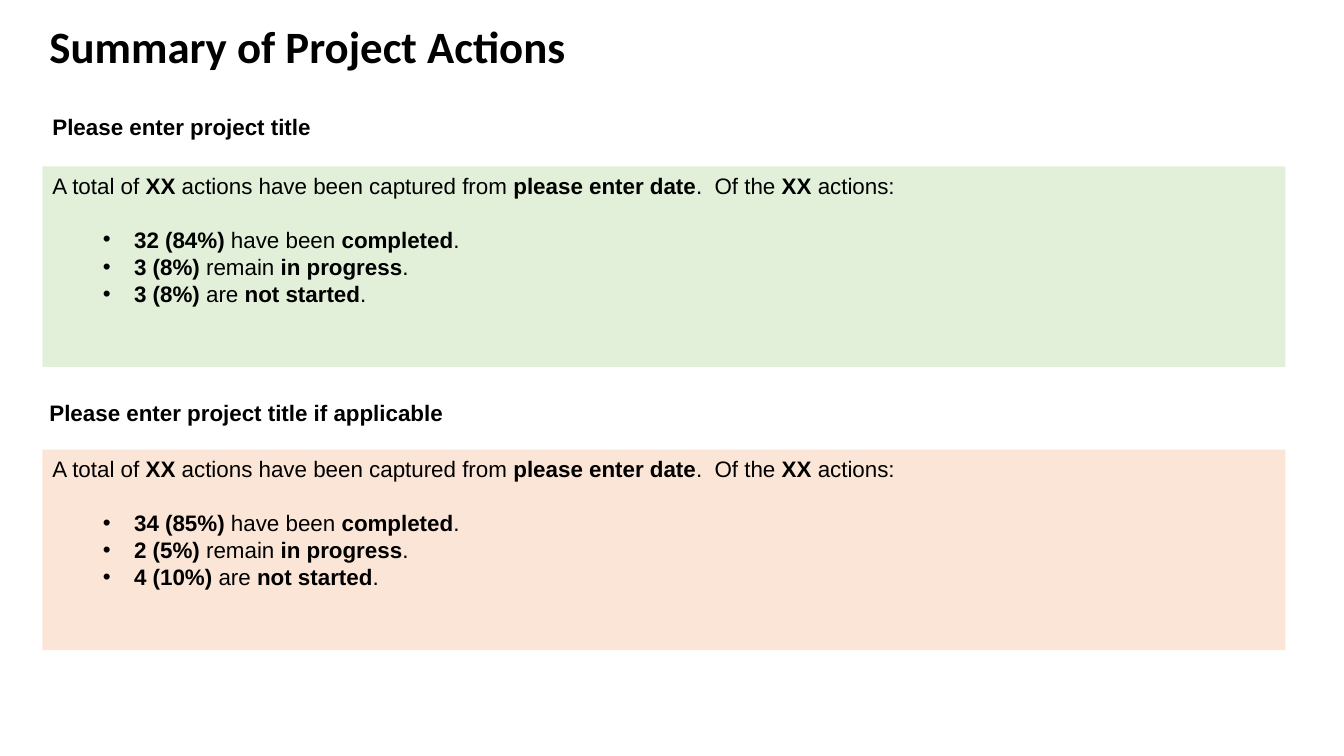
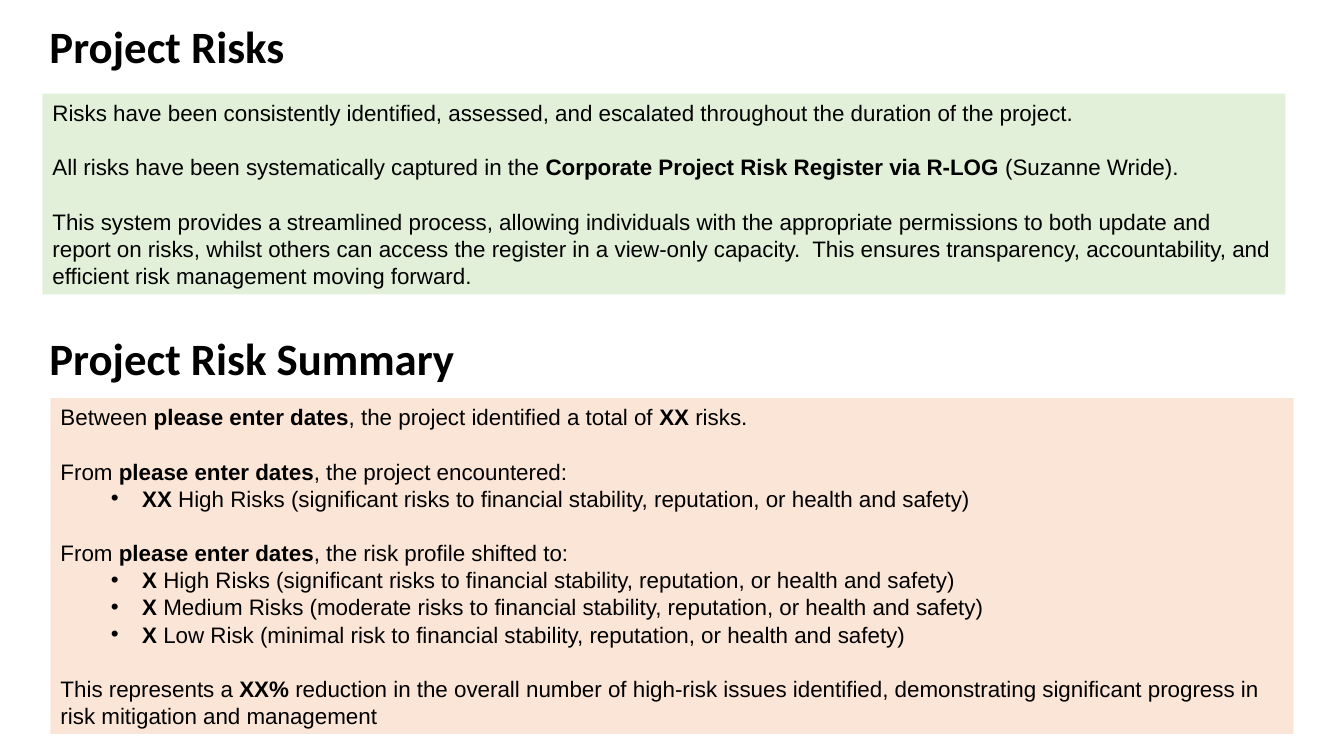
from lxml import etree
from pptx import Presentation
from pptx.dml.color import RGBColor
from pptx.enum.text import MSO_ANCHOR, MSO_AUTO_SIZE, PP_ALIGN
from pptx.oxml.ns import qn
from pptx.util import Inches, Pt

TOP = MSO_ANCHOR.TOP
NO_AUTOFIT = MSO_AUTO_SIZE.NONE
LEFT = PP_ALIGN.LEFT

BLACK = RGBColor(0x00, 0x00, 0x00)
GREEN = RGBColor(0xE2, 0xF0, 0xD9)
PEACH = RGBColor(0xFB, 0xE5, 0xD6)

TITLE_FONT = "Calibri"
BODY_FONT = "Arial"
TITLE_SIZE = Pt(32)
BODY_SIZE = Pt(16)
LINE_PITCH = Pt(19.4)

COMPARISON_LAYOUT = 4
TWO_CONTENT_LAYOUT = 3

HEADING_LEFT = 0.39
CARD_LEFT = 0.42
CARD_WIDTH = 12.33
CARD_HEIGHT = 1.99
BULLET_MARGIN = Inches(0.81)
BULLET_INDENT = Inches(-0.31)

ACTIONS_INTRO = (
    "A total of **XX **actions have been captured from **please enter date**"
    ".  Of the** XX **actions:"
)
IMPACT = "to financial stability, reputation, or health and safety)"
HIGH_RISKS = f" High Risks (significant risks {IMPACT}"

RISK_PROCESS = [
    ["Risks have been consistently identified, assessed, and escalated "
     "throughout the duration of the project."],
    ["All risks have been systematically captured in the "
     "**Corporate Project Risk Register via R-LOG **(Suzanne Wride)."],
    ["This system provides a streamlined process, allowing individuals with the "
     "appropriate permissions to both update and report on risks, whilst others "
     "can access the register in a view-only capacity.  This ensures "
     "transparency, accountability, and efficient risk management moving forward."],
]
RISK_SUMMARY = [
    ["Between **please enter dates**, the project identified a total of **XX** risks."],
    ["From **please enter dates**, the project encountered:",
     f"•**XX**{HIGH_RISKS}"],
    ["From **please enter dates**, the risk profile shifted to:",
     f"•**X**{HIGH_RISKS}",
     f"•**X** Medium Risks (moderate risks {IMPACT}",
     f"•**X** Low Risk (minimal risk {IMPACT}"],
    ["This represents a **XX% **reduction in the overall number of high-risk issues "
     "identified, demonstrating significant progress in risk mitigation and management"],
]


def action_groups(completed, in_progress, not_started):
    """Return the paragraph groups that report the state of the actions."""
    return [
        [ACTIONS_INTRO],
        [f"•**{completed} **have been **completed**.",
         f"•**{in_progress} **remain **in progress**.",
         f"•**{not_started} **are **not started**."],
    ]


def place(shape, left, top, width, height):
    """Move a shape and give its text frame the shared settings."""
    shape.left, shape.top = Inches(left), Inches(top)
    shape.width, shape.height = Inches(width), Inches(height)
    frame = shape.text_frame
    frame.word_wrap = True
    frame.auto_size = NO_AUTOFIT
    frame.vertical_anchor = TOP
    return frame


def format_run(run, name, size, bold):
    """Set the font of one run."""
    run.font.name = name
    run.font.size = size
    run.font.bold = bold
    run.font.color.rgb = BLACK


def format_paragraph(paragraph, bulleted=False, gap=Pt(0)):
    """Set alignment, spacing and bullet of a paragraph."""
    paragraph.alignment = LEFT
    paragraph.space_before = Pt(0)
    paragraph.space_after = gap
    paragraph.level = 1 if bulleted else 0
    properties = paragraph._p.get_or_add_pPr()
    properties.set("marL", str(BULLET_MARGIN if bulleted else 0))
    properties.set("indent", str(BULLET_INDENT if bulleted else 0))
    if bulleted:
        etree.SubElement(properties, qn("a:buFont")).set("typeface", BODY_FONT)
        etree.SubElement(properties, qn("a:buChar")).set("char", "•")
    else:
        etree.SubElement(properties, qn("a:buNone"))


def write_heading(shape, text, left, top, width, height, name, size):
    """Write a bold one-line heading."""
    frame = place(shape, left, top, width, height)
    frame.text = text
    paragraph = frame.paragraphs[0]
    format_paragraph(paragraph)
    format_run(paragraph.runs[0], name, size, True)


def write_title(shape, text, top=0.14):
    """Write a large title."""
    write_heading(shape, text, HEADING_LEFT, top, 11.78, 0.64, TITLE_FONT, TITLE_SIZE)


def write_subheading(shape, text, left, top):
    """Write the project heading above a card."""
    write_heading(shape, text, left, top, 5.93, 0.37, BODY_FONT, BODY_SIZE)


def write_card(shape, groups, color, top, left=CARD_LEFT, height=CARD_HEIGHT):
    """Fill a coloured card with groups of paragraphs set one line apart."""
    frame = place(shape, left, top, CARD_WIDTH, height)
    shape.fill.solid()
    shape.fill.fore_color.rgb = color
    paragraph = None
    for group in groups:
        for position, text in enumerate(group, start=1):
            paragraph = frame.add_paragraph() if paragraph else frame.paragraphs[0]
            ends_group = position == len(group) and group is not groups[-1]
            gap = LINE_PITCH if ends_group else Pt(0)
            format_paragraph(paragraph, text.startswith("•"), gap)
            paragraph.line_spacing = LINE_PITCH
            for index, part in enumerate(text.lstrip("•").split("**")):
                if part:
                    run = paragraph.add_run()
                    run.text = part
                    format_run(run, BODY_FONT, BODY_SIZE, index % 2 == 1)


def add_actions_slide(presentation):
    """Add the slide that sums up the project actions."""
    slide = presentation.slides.add_slide(presentation.slide_layouts[COMPARISON_LAYOUT])
    title, first_heading, first_card, second_heading, second_card = slide.placeholders
    write_title(title, "Summary of Project Actions")
    write_subheading(first_heading, "Please enter project title", CARD_LEFT, 1.07)
    write_card(first_card, action_groups("32 (84%)", "3 (8%)", "3 (8%)"), GREEN, 1.65)
    write_subheading(second_heading, "Please enter project title if applicable",
                     HEADING_LEFT, 3.91)
    write_card(second_card, action_groups("34 (85%)", "2 (5%)", "4 (10%)"), PEACH, 4.46)


def add_risks_slide(presentation):
    """Add the slide that describes and sums up the project risks."""
    slide = presentation.slides.add_slide(presentation.slide_layouts[TWO_CONTENT_LAYOUT])
    title, process_card, summary_card = slide.placeholders
    write_title(title, "Project Risks")
    write_card(process_card, RISK_PROCESS, GREEN, 0.93)
    summary_title = slide.shapes.add_textbox(0, 0, 0, 0)
    write_title(summary_title, "Project Risk Summary", 3.23)
    write_card(summary_card, RISK_SUMMARY, PEACH, 3.95, left=0.5, height=3.33)


def main():
    """Build and save the presentation."""
    presentation = Presentation()
    presentation.slide_width = Inches(13.33)
    presentation.slide_height = Inches(7.5)
    add_actions_slide(presentation)
    add_risks_slide(presentation)
    presentation.save("out.pptx")


if __name__ == "__main__":
    main()
